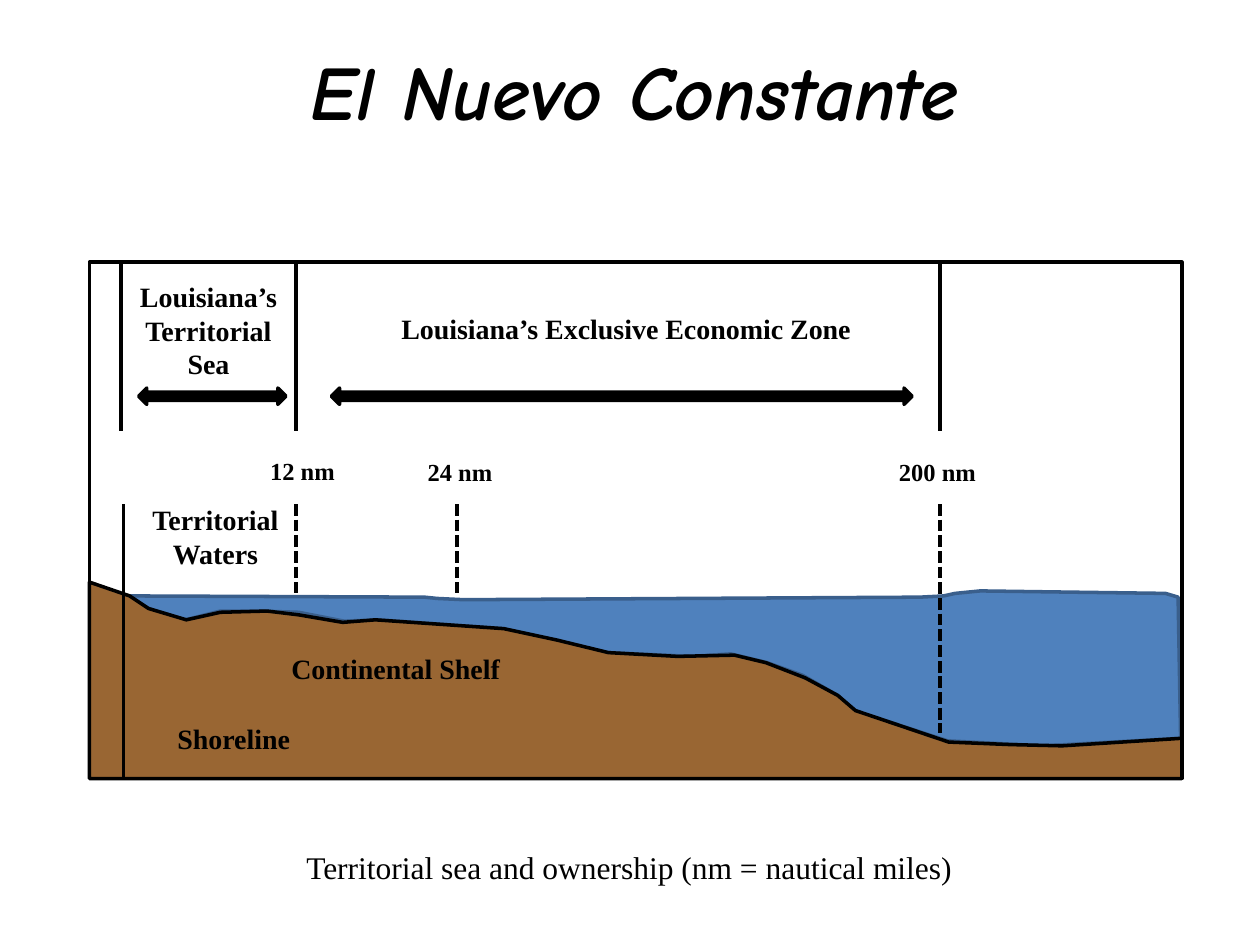
"""Build a slide showing the maritime zones off Louisiana."""
from typing import NamedTuple

from lxml.etree import SubElement
from pptx import Presentation
from pptx.dml.color import RGBColor
from pptx.enum.dml import MSO_LINE
from pptx.enum.shapes import MSO_CONNECTOR, MSO_SHAPE
from pptx.enum.text import MSO_ANCHOR, PP_ALIGN
from pptx.oxml.ns import qn
from pptx.util import Inches, Pt

BLACK = "000000"
SEA_BLUE = "4F81BD"
SEA_EDGE = "3A5F8C"
SEABED_BROWN = "996633"
BODY_FONT = "Times New Roman"
TITLE_FONT = "Comic Neue"


class Label(NamedTuple):
    text: str
    left: float
    top: float
    width: float
    height: float
    size: int = 16
    bold: bool = True
    wrap: bool = False


class Boundary(NamedTuple):
    x: float
    top: float
    bottom: float
    dashed: bool = False


class Block(NamedTuple):
    kind: MSO_SHAPE
    left: float
    top: float
    width: float
    height: float
    fill: str | None = None


class Outline(NamedTuple):
    points: list[tuple[float, float]]
    fill: str
    edge: str


SEA = Outline(
    [(1.02, 4.73), (3.37, 4.74), (3.47, 4.75), (3.68, 4.76), (7.3, 4.74),
     (7.49, 4.73), (7.58, 4.71), (7.78, 4.69), (8.5, 4.7), (9.25, 4.71),
     (9.35, 4.74), (9.37, 5.86), (8.28, 5.92), (7.52, 5.88), (6.78, 5.64),
     (6.65, 5.52), (6.37, 5.36), (6.09, 5.26), (5.8, 5.19), (5.49, 5.21),
     (4.82, 5.18), (3.99, 4.99), (3.01, 4.92), (2.73, 4.93), (2.37, 4.86),
     (2.06, 4.85), (1.75, 4.85), (1.47, 4.92), (1.18, 4.83)],
    SEA_BLUE, SEA_EDGE)
SEABED = Outline(
    [(0.71, 4.62), (1.03, 4.73), (1.18, 4.83), (1.48, 4.92), (1.75, 4.86),
     (2.12, 4.85), (2.37, 4.88), (2.72, 4.94), (2.98, 4.92), (4, 4.99),
     (4.42, 5.08), (4.83, 5.18), (5.38, 5.21), (5.83, 5.2), (6.08, 5.26),
     (6.39, 5.38), (6.65, 5.52), (6.79, 5.64), (7.53, 5.89), (8.02, 5.91),
     (8.43, 5.92), (9.38, 5.86), (9.38, 6.18), (0.71, 6.18)],
    SEABED_BROWN, BLACK)
BLOCKS = [
    Block(MSO_SHAPE.RECTANGLE, 0.71, 2.08, 8.67, 4.1),
    Block(MSO_SHAPE.LEFT_RIGHT_ARROW, 2.63, 3.08, 4.61, 0.13, BLACK),
    Block(MSO_SHAPE.LEFT_RIGHT_ARROW, 1.1, 3.08, 1.17, 0.13, BLACK),
]
BOUNDARIES = [
    *(Boundary(x, 2.08, 3.42) for x in (0.96, 2.35, 7.46)),
    Boundary(0.98, 4, 6.17),
    Boundary(2.35, 4, 4.71, True),
    Boundary(3.63, 4, 4.71, True),
    Boundary(7.46, 4, 5.82, True),
]
LABELS = [
    Label("Louisiana’s\nTerritorial\nSea", 1, 2.17, 1.31, 0.91),
    Label("Louisiana’s Exclusive Economic Zone", 3.06, 2.42, 3.82, 0.37),
    Label("12 nm", 2.04, 3.57, 0.72, 0.34, 14),
    Label("24 nm", 3.29, 3.58, 0.72, 0.34, 14),
    Label("200 nm", 7.03, 3.58, 0.82, 0.34, 14),
    Label("Territorial\nWaters", 1.1, 3.94, 1.22, 0.64),
    Label("Continental Shelf", 2.2, 5.12, 1.88, 0.37),
    Label("Shoreline", 1.3, 5.68, 1.11, 0.37),
    Label("Territorial sea and ownership (nm = nautical miles)",
          0.24, 6.68, 9.51, 0.4, 18, False, True),
]


def color(value: str) -> RGBColor:
    return RGBColor.from_string(value)


def style_text(text_frame, font_name: str, size: int, bold: bool, italic: bool = False) -> None:
    for paragraph in text_frame.paragraphs:
        paragraph.alignment = PP_ALIGN.CENTER
        for run in paragraph.runs:
            run.font.name = font_name
            run.font.size = Pt(size)
            run.font.bold = bold
            run.font.italic = italic
            run.font.color.rgb = color(BLACK)


def style_shape(shape, fill: str | None, edge: str) -> None:
    shape.shadow.inherit = False
    if fill:
        shape.fill.solid()
        shape.fill.fore_color.rgb = color(fill)
    else:
        shape.fill.background()
    shape.line.color.rgb = color(edge)
    shape.line.width = Pt(2)


def set_title(slide, text: str) -> None:
    title = slide.shapes.title
    title.left, title.top = Inches(0.33), Inches(0.17)
    title.width, title.height = Inches(9.42), Inches(1.08)
    title.text_frame.text = text
    title.text_frame.vertical_anchor = MSO_ANCHOR.MIDDLE
    style_text(title.text_frame, TITLE_FONT, 44, True, True)


def draw_outline(slide, outline: Outline) -> None:
    points = [(Inches(x), Inches(y)) for x, y in outline.points]
    builder = slide.shapes.build_freeform(*points[0])
    builder.add_line_segments(points[1:], close=True)
    style_shape(builder.convert_to_shape(), outline.fill, outline.edge)


def draw_block(slide, block: Block) -> None:
    shape = slide.shapes.add_shape(
        block.kind, Inches(block.left), Inches(block.top),
        Inches(block.width), Inches(block.height))
    style_shape(shape, block.fill, BLACK)


def draw_boundary(slide, boundary: Boundary) -> None:
    connector = slide.shapes.add_connector(
        MSO_CONNECTOR.STRAIGHT, Inches(boundary.x), Inches(boundary.top),
        Inches(boundary.x), Inches(boundary.bottom))
    connector.line.color.rgb = color(BLACK)
    connector.line.width = Pt(2.25)
    if boundary.dashed:
        connector.line.dash_style = MSO_LINE.SQUARE_DOT
    SubElement(connector._element.spPr, qn("a:effectLst"))


def draw_label(slide, label: Label) -> None:
    box = slide.shapes.add_textbox(
        Inches(label.left), Inches(label.top), Inches(label.width), Inches(label.height))
    box.text_frame.text = label.text
    box.text_frame.word_wrap = label.wrap
    style_text(box.text_frame, BODY_FONT, label.size, label.bold)


def main() -> None:
    presentation = Presentation()
    presentation.slide_width, presentation.slide_height = Inches(10), Inches(7.5)
    slide = presentation.slides.add_slide(presentation.slide_layouts[5])
    set_title(slide, "El Nuevo Constante")
    draw_outline(slide, SEA)
    for block in BLOCKS:
        draw_block(slide, block)
    draw_outline(slide, SEABED)
    for boundary in BOUNDARIES:
        draw_boundary(slide, boundary)
    for label in LABELS:
        draw_label(slide, label)
    presentation.save("out.pptx")


if __name__ == "__main__":
    main()
